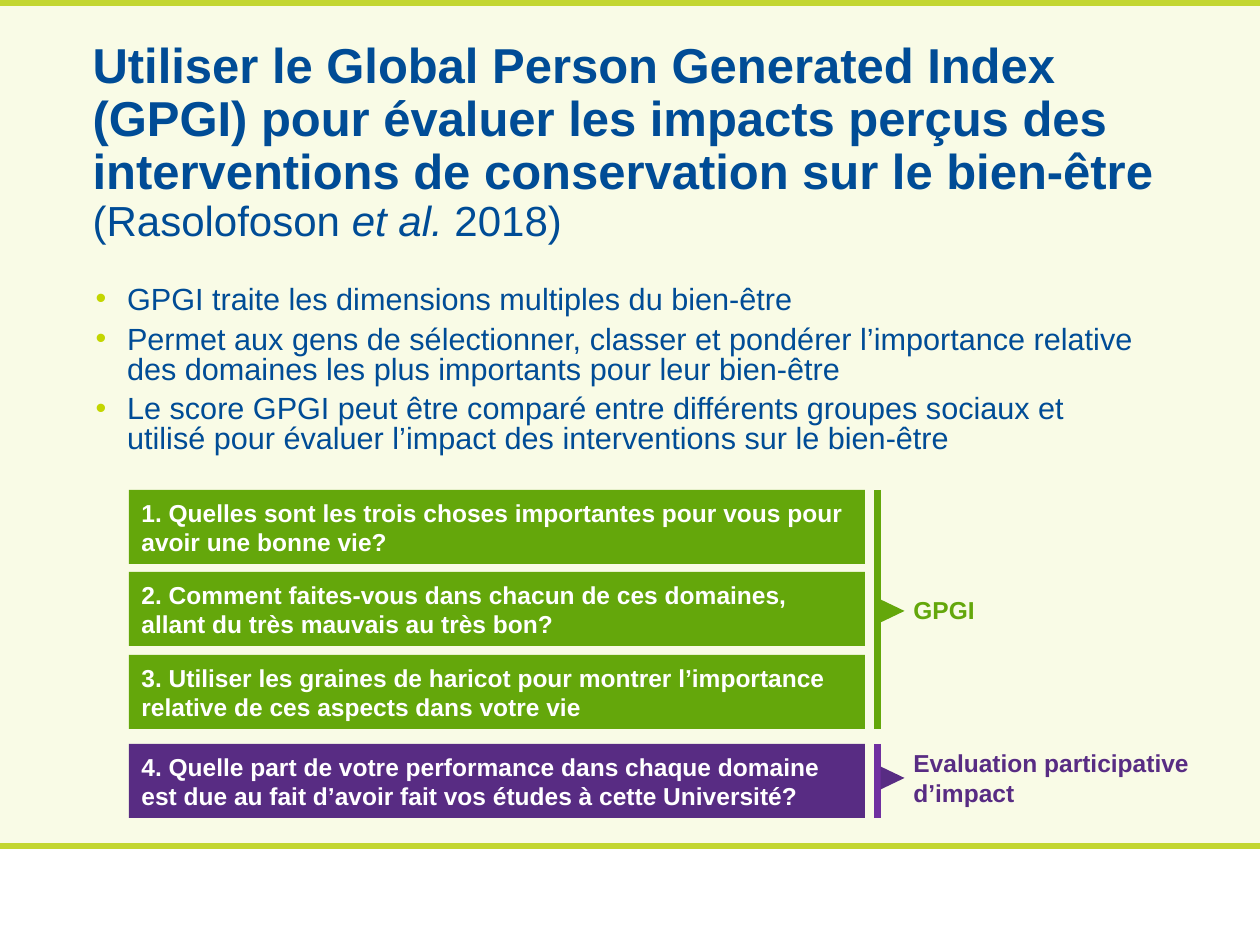
from typing import NamedTuple

import lxml.etree
import pptx
import pptx.dml.color
import pptx.enum.shapes
import pptx.enum.text
import pptx.oxml.ns
import pptx.util

RGBColor = pptx.dml.color.RGBColor
Shape = pptx.enum.shapes.MSO_SHAPE
Anchor = pptx.enum.text.MSO_ANCHOR
qn = pptx.oxml.ns.qn

PX = 914400 / 126
FONT = "Arial"
CREAM = RGBColor(0xF9, 0xFB, 0xE6)
WHITE = RGBColor(0xFF, 0xFF, 0xFF)
LIME = RGBColor(0xC3, 0xD6, 0x31)
BULLET = RGBColor(0xC3, 0xD6, 0x00)
BLUE = RGBColor(0x00, 0x4C, 0x96)
GREEN = RGBColor(0x64, 0xA7, 0x0B)
PURPLE = RGBColor(0x58, 0x2C, 0x83)
VIOLET = RGBColor(0x70, 0x30, 0xA0)


class Box(NamedTuple):
    x: int
    y: int
    w: int
    h: int


class Band(NamedTuple):
    box: Box
    color: RGBColor


class Step(NamedTuple):
    y: int
    color: RGBColor
    text: str


class Bracket(NamedTuple):
    top: int
    bottom: int
    arrow_y: int
    label: Box
    rail: RGBColor
    color: RGBColor
    text: str


BANDS = [
    Band(Box(0, 849, 1260, 96), WHITE),
    Band(Box(0, 843, 1260, 6), LIME),
    Band(Box(0, 0, 1260, 6), LIME),
]
TITLE = [
    ("Utiliser le Global Person Generated Index \v(GPGI) pour évaluer les impacts perçus des "
     "interventions de conservation sur le bien-être ", {"size": 28, "bold": True}),
    ("(Rasolofoson ", {"size": 24, "bold": False}),
    ("et al. ", {"size": 24, "bold": False, "italic": True}),
    ("2018)", {"size": 24, "bold": False}),
]
POINTS = [
    "GPGI traite les dimensions multiples du bien-être",
    "Permet aux gens de sélectionner, classer et pondérer l’importance relative "
    "des domaines les plus importants pour leur bien-être",
    "Le score GPGI peut être comparé entre différents groupes sociaux et "
    "utilisé pour évaluer l’impact des interventions sur le bien-être",
]
STEPS = [
    Step(490, GREEN, "1. Quelles sont les trois choses importantes pour vous pour avoir une bonne vie?"),
    Step(572, GREEN, "2. Comment faites-vous dans chacun de ces domaines, allant du très mauvais au très bon?"),
    Step(655, GREEN, "3. Utiliser les graines de haricot pour montrer l’importance relative de ces aspects "
                     "dans votre vie"),
    Step(744, PURPLE, "4. Quelle part de votre performance dans chaque domaine est due au fait d’avoir fait "
                      "vos études à cette Université?"),
]
BRACKETS = [
    Bracket(490, 729, 599, Box(901, 589, 121, 43), GREEN, GREEN, "GPGI"),
    Bracket(744, 818, 766, Box(901, 742, 359, 72), VIOLET, PURPLE, "Evaluation participative \vd’impact"),
]


def emu(px: int) -> int:
    return round(px * PX)


def place(sp, box: Box) -> None:
    for name, px in zip(("left", "top", "width", "height"), box):
        setattr(sp, name, emu(px))


def add_text(p, text: str, color: RGBColor, **formats) -> None:
    start = len(p.runs)
    for i, line in enumerate(text.split("\v")):
        if i:
            p.add_line_break()
        p.add_run().text = line
    for r in p.runs[start:]:
        r.font.color.rgb = color
        for name, value in {"name": FONT, **formats}.items():
            setattr(r.font, name, pptx.util.Pt(value) if name == "size" else value)


def set_frame(tf, **formats) -> None:
    for name, value in {"word_wrap": True, "auto_size": pptx.enum.text.MSO_AUTO_SIZE.NONE, **formats}.items():
        setattr(tf, name, value)


def add_solid(s, kind: int, box: Box, color: RGBColor):
    sp = s.shapes.add_shape(kind, *map(emu, box))
    sp.shadow.inherit = False
    sp.fill.solid()
    sp.fill.fore_color.rgb = color
    sp.line.fill.background()
    return sp


def add_bullet(p) -> None:
    pPr = p._p.get_or_add_pPr()
    pPr.set("marL", "228600")
    pPr.set("indent", "-228600")
    color = lxml.etree.SubElement(pPr, qn("a:buClr"))
    lxml.etree.SubElement(color, qn("a:srgbClr"), val=str(BULLET))
    lxml.etree.SubElement(pPr, qn("a:buFont"), typeface=FONT)
    lxml.etree.SubElement(pPr, qn("a:buChar"), char="•")


def fill_title(sp) -> None:
    place(sp, Box(80, 52, 1180, 183))
    set_frame(sp.text_frame, vertical_anchor=Anchor.MIDDLE)
    p = sp.text_frame.paragraphs[0]
    p.alignment = pptx.enum.text.PP_ALIGN.LEFT
    p.line_spacing = 0.9
    for text, formats in TITLE:
        add_text(p, text, BLUE, **formats)


def fill_body(sp) -> None:
    place(sp, Box(83, 281, 1069, 218))
    tf = sp.text_frame
    set_frame(tf, vertical_anchor=Anchor.TOP)
    for i, text in enumerate(POINTS):
        p = tf.add_paragraph() if i else tf.paragraphs[0]
        add_bullet(p)
        p.line_spacing = 0.8
        p.space_before = pptx.util.Pt(6 if i else 0)
        add_text(p, text, BLUE, size=17.5)


def add_step(s, step: Step) -> None:
    sp = add_solid(s, Shape.RECTANGLE, Box(129, step.y, 736, 74), step.color)
    set_frame(sp.text_frame, vertical_anchor=Anchor.MIDDLE)
    p = sp.text_frame.paragraphs[0]
    p.alignment = pptx.enum.text.PP_ALIGN.LEFT
    add_text(p, step.text, WHITE, size=14, bold=True)


def add_bracket(s, bracket: Bracket) -> None:
    x = emu(878)
    rail = s.shapes.add_connector(
        pptx.enum.shapes.MSO_CONNECTOR.STRAIGHT, x, emu(bracket.top), x, emu(bracket.bottom))
    rail.line.color.rgb = bracket.rail
    rail.line.width = pptx.util.Pt(4)
    lxml.etree.SubElement(rail._element.spPr, qn("a:effectLst"))
    arrow = add_solid(s, Shape.ISOSCELES_TRIANGLE, Box(881, bracket.arrow_y, 23, 24), bracket.color)
    arrow.rotation = 90
    label = s.shapes.add_textbox(*map(emu, bracket.label))
    set_frame(label.text_frame)
    add_text(label.text_frame.paragraphs[0], bracket.text, bracket.color, size=14, bold=True)


def main() -> None:
    prs = pptx.Presentation()
    prs.slide_width, prs.slide_height = emu(1260), emu(945)
    s = prs.slides.add_slide(prs.slide_layouts[1])
    s.background.fill.solid()
    s.background.fill.fore_color.rgb = CREAM
    for band in BANDS:
        add_solid(s, Shape.RECTANGLE, band.box, band.color)
    fill_title(s.shapes.title)
    fill_body(s.placeholders[1])
    for step in STEPS:
        add_step(s, step)
    for bracket in BRACKETS:
        add_bracket(s, bracket)
    prs.save("out.pptx")


if __name__ == "__main__":
    main()
